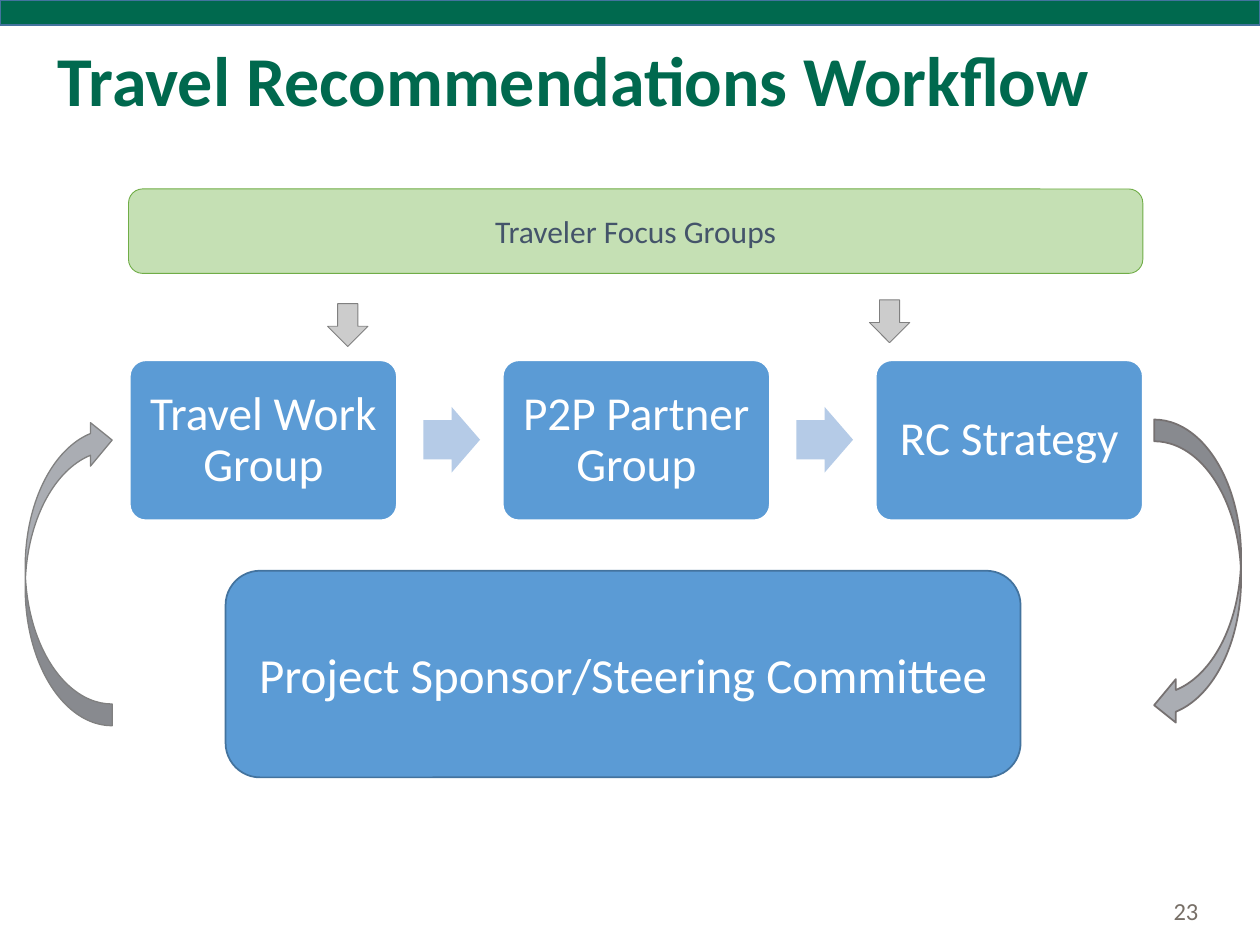
import pptx
import pptx.util
import pptx.dml.color
import pptx.enum.shapes
import pptx.enum.text

Inches = pptx.util.Inches
Pt = pptx.util.Pt
RGBColor = pptx.dml.color.RGBColor
MSO = pptx.enum.shapes.MSO_SHAPE
ALIGN = pptx.enum.text.PP_ALIGN
MIDDLE = pptx.enum.text.MSO_ANCHOR.MIDDLE

WHITE = RGBColor(0xFF, 0xFF, 0xFF)
GREEN = RGBColor(0x00, 0x69, 0x4E)
BLUE = RGBColor(0x5B, 0x9B, 0xD5)
DARK_BLUE = RGBColor(0x43, 0x73, 0x9E)
PALE_BLUE = RGBColor(0xB5, 0xCB, 0xE7)
PALE_GREEN = RGBColor(0xC5, 0xE0, 0xB4)
LEAF = RGBColor(0x70, 0xAD, 0x47)
SLATE = RGBColor(0x44, 0x54, 0x6A)
STEEL = RGBColor(0xAA, 0xAD, 0xB3)
SILVER = RGBColor(0xCC, 0xCC, 0xCC)
GRAY = RGBColor(0x80, 0x80, 0x80)
WARM_GRAY = RGBColor(0x76, 0x71, 0x71)
TAUPE = RGBColor(0x77, 0x6F, 0x67)

prs = pptx.Presentation()
prs.slide_width = Inches(10)
prs.slide_height = Inches(7.5)
s = prs.slides.add_slide(prs.slide_layouts[6])


def add_shape(kind, x, y, w, h, fill, line=None, width=1):
    sp = s.shapes.add_shape(kind, Inches(x), Inches(y), Inches(w), Inches(h))
    sp.shadow.inherit = False
    sp.fill.solid()
    sp.fill.fore_color.rgb = fill
    if line is None:
        sp.line.fill.background()
    else:
        sp.line.color.rgb = line
        sp.line.width = Pt(width)
    return sp


def set_text(sp, text, size, color, align=ALIGN.CENTER):
    tf = sp.text_frame
    tf.word_wrap = True
    tf.vertical_anchor = MIDDLE
    p = tf.paragraphs[0]
    p.text = text
    p.alignment = align
    p.font.name = "Calibri"
    p.font.size = Pt(size)
    p.font.color.rgb = color
    return p


add_shape(MSO.RECTANGLE, 0, 0, 10, 0.2, GREEN, DARK_BLUE)

number = s.shapes.add_textbox(Inches(6.61), Inches(7.03), Inches(3), Inches(0.4))
set_text(number, "23", 14, TAUPE, ALIGN.RIGHT)

committee = add_shape(MSO.ROUNDED_RECTANGLE, 1.79, 4.53, 6.31, 1.64, BLUE, DARK_BLUE)
set_text(committee, "Project Sponsor/Steering Committee", 28, WHITE)

steps = ["Travel Work Group", "P2P Partner Group", "RC Strategy"]
for i, step in enumerate(steps):
    x = 1.03 + 2.96 * i
    box = add_shape(MSO.ROUNDED_RECTANGLE, x, 2.86, 2.12, 1.27, BLUE, WHITE)
    box.adjustments[0] = 0.1
    tf = box.text_frame
    tf.margin_left = tf.margin_right = tf.margin_top = tf.margin_bottom = Inches(0.11)
    p = set_text(box, step, 27, WHITE)
    p.line_spacing = 0.9
    if i < len(steps) - 1:
        arrow = add_shape(MSO.RIGHT_ARROW, x + 2.33, 3.23, 0.45, 0.52, PALE_BLUE)
        arrow.adjustments[0] = 0.6

add_shape(MSO.CURVED_LEFT_ARROW, 9.16, 3.33, 0.69, 2.44, STEEL, WARM_GRAY)
feedback = add_shape(MSO.CURVED_LEFT_ARROW, 0.2, 3.32, 0.69, 2.44, STEEL, GRAY, 0.75)
feedback.rotation = 180

for x, y in [(6.9, 2.38), (2.6, 2.41)]:
    add_shape(MSO.DOWN_ARROW, x, y, 0.32, 0.34, SILVER, GRAY, 0.5)

focus = add_shape(MSO.ROUNDED_RECTANGLE, 1.02, 1.5, 8.05, 0.67, PALE_GREEN, LEAF, 0.5)
set_text(focus, "Traveler Focus Groups", 18, SLATE)

title = s.shapes.add_textbox(Inches(0.36), Inches(-0.06), Inches(10.01), Inches(1.45))
p = set_text(title, "Travel Recommendations Workflow", 40, GREEN, ALIGN.LEFT)
p.font.bold = True
p.line_spacing = 0.9

prs.save("out.pptx")
